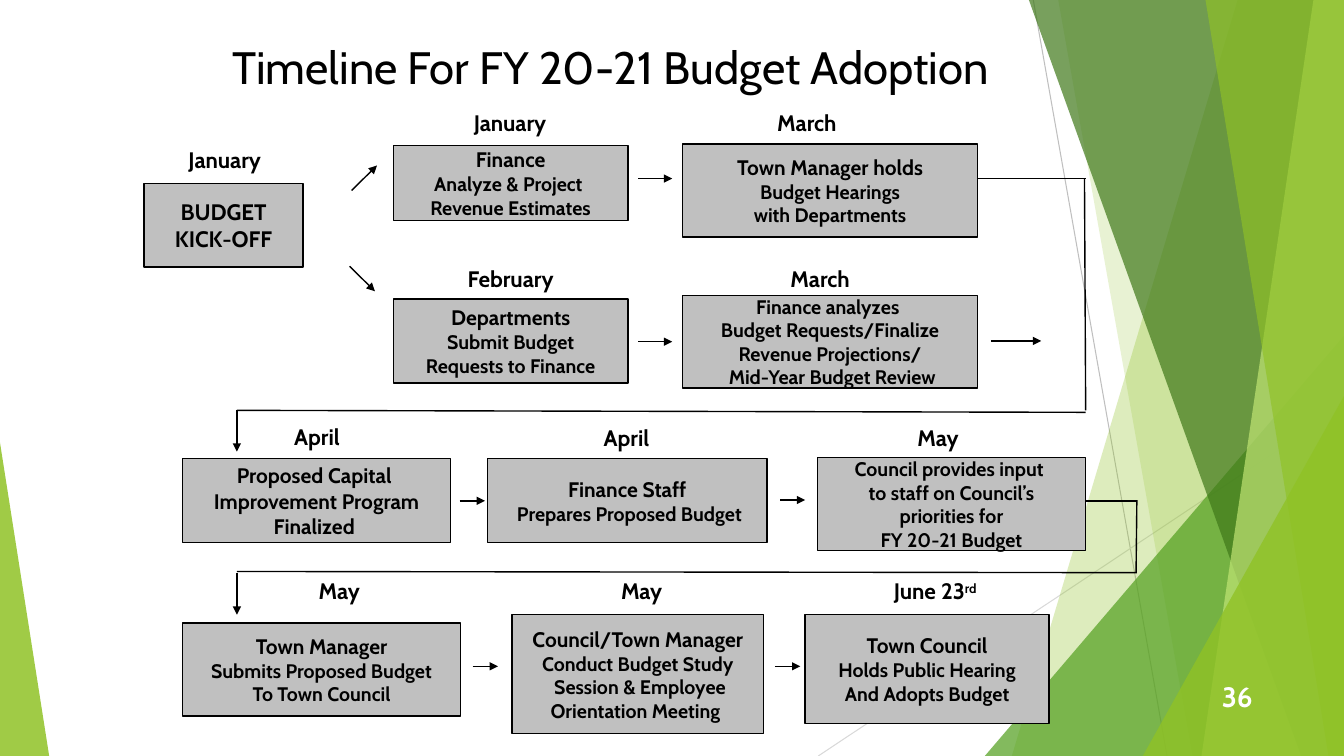
from dataclasses import dataclass

from lxml.etree import SubElement
from pptx import Presentation
from pptx.dml.color import RGBColor
from pptx.enum.shapes import MSO_CONNECTOR as Connector, MSO_SHAPE as Shape
from pptx.enum.text import MSO_ANCHOR as Anchor, PP_ALIGN as Align
from pptx.oxml.ns import qn
from pptx.util import Cm, Pt


@dataclass(frozen=True)
class Theme:
    font: str = "Cabin"
    ink: str = "000000"
    white: str = "FFFFFF"
    box: str = "C0C0C0"
    ray: str = "BFBFBF"
    pale_ray: str = "D9D9D9"
    green: str = "90C226"
    leaf: str = "54A021"
    forest: str = "3F7819"
    lime: str = "C0E474"
    title: float = 32.4
    page: float = 20
    month: float = 16
    lead: float = 15
    body: float = 14
    rule: float = 1
    ray_rule: float = 0.75


theme = Theme()
WIDTH, HEIGHT = 33.87, 19.05

deck = Presentation()
deck.slide_width, deck.slide_height = Cm(WIDTH), Cm(HEIGHT)
slide = deck.slides.add_slide(deck.slide_layouts[6])
shapes = slide.shapes


def write(frame, lines, align, anchor=Anchor.TOP, color=theme.ink, bold=True, wrap=True):
    frame.word_wrap = wrap
    frame.vertical_anchor = anchor
    for index, runs in enumerate(lines):
        paragraph = frame.paragraphs[0] if index == 0 else frame.add_paragraph()
        paragraph.alignment = align
        for words, size, raised in runs:
            run = paragraph.add_run()
            run.text = words
            run.font.name = theme.font
            run.font.size = Pt(size)
            run.font.bold = bold
            run.font.color.rgb = RGBColor.from_string(color)
            if raised:
                run.font._element.set("baseline", "30000")


def draw_line(ends, color=theme.ink, width=theme.rule, arrow=False):
    line = shapes.add_connector(Connector.STRAIGHT, *map(Cm, ends))
    line.line.color.rgb = RGBColor.from_string(color)
    line.line.width = Pt(width)
    if arrow:
        SubElement(line.line._get_or_add_ln(), qn("a:tailEnd"), type="triangle")
    SubElement(line._element.spPr, qn("a:effectLst"))


draw_line((26.04, 0, 29.41, HEIGHT), theme.ray, theme.ray_rule)
draw_line((WIDTH, 10.24, 20.62, HEIGHT), theme.pale_ray, theme.ray_rule)

# Bands give top and bottom left edges; wedges give left, top, width and apex.
backdrop = [
    (theme.green, 30, (31.19, 25.5)),
    (theme.green, 20, (26.67, 30.05)),
    (theme.leaf, 72, (24.82, 8.46, 9.05, 1)),
    (theme.forest, 70, (25.93, 32.79)),
    (theme.lime, 70, (33.1, 30.28)),
    (theme.green, 65, (30.38, 33.48)),
    (theme.green, 80, (28.8, 9.98, 5.07, 1)),
    (theme.green, 85, (0, 11.15, 1.24, 0)),
]
for color, opacity, outline in backdrop:
    if len(outline) == 2:
        top_edge, bottom_edge = outline
        corners = [(WIDTH, 0), (WIDTH, HEIGHT), (bottom_edge, HEIGHT)]
        builder = shapes.build_freeform(Cm(top_edge), Cm(0))
        builder.add_line_segments([(Cm(x), Cm(y)) for x, y in corners])
        facet = builder.convert_to_shape()
    else:
        left, top, width, apex = outline
        facet = shapes.add_shape(
            Shape.ISOSCELES_TRIANGLE, Cm(left), Cm(top), Cm(width), Cm(HEIGHT - top))
        facet.adjustments[0] = apex
    facet.shadow.inherit = False
    facet.line.fill.background()
    facet.fill.solid()
    facet.fill.fore_color.rgb = RGBColor.from_string(color)
    tint = facet.fill._xPr.find(qn("a:solidFill"))[0]
    SubElement(tint, qn("a:alpha"), val=str(opacity * 1000))

title = shapes.add_textbox(Cm(5.61), Cm(0.79), Cm(20.32), Cm(1.75))
write(title.text_frame, [[("Timeline For FY 20-21 Budget Adoption", theme.title, False)]],
      Align.LEFT, Anchor.MIDDLE, bold=False)

steps = [
    ("January", (3.76, 3.56, 3.81), (3.63, 4.62, 4.01, 2.11), theme.month, theme.month,
     ["BUDGET", "KICK-OFF"]),
    ("January", (10.95, 2.62, 3.81), (9.91, 3.66, 5.92, 1.9), theme.lead, theme.body,
     ["Finance", "Analyze & Project ", "Revenue Estimates"]),
    ("February", (9.91, 6.55, 5.92), (9.91, 7.54, 5.92, 2.11), theme.lead, theme.body,
     ["Departments", "Submit Budget", "Requests to Finance"]),
    ("March", (18.8, 2.62, 3.07), (17.2, 3.63, 7.44, 2.34), theme.lead, theme.body,
     ["Town Manager holds", "Budget Hearings", "with Departments"]),
    ("March", (17.81, 6.55, 5.72), (17.2, 7.44, 7.44, 2.34), theme.body, theme.body,
     ["Finance analyzes ", " Budget Requests/Finalize ", "Revenue Projections/",
      " Mid-Year Budget Review"]),
    ("April", (6.4, 10.54, 3.18), (4.6, 11.56, 6.76, 2.11), theme.lead, theme.lead,
     ["Proposed Capital ", "Improvement Program", "Finalized "]),
    ("April", (14.2, 10.57, 3.18), (12.29, 11.56, 7.04, 2.11), theme.lead, theme.body,
     ["Finance Staff", " Prepares Proposed Budget"]),
    ("May", (22.05, 10.57, 3.18), (20.6, 11.53, 6.76, 2.34), theme.body, theme.body,
     ["Council provides input ", "to staff on Council’s", " priorities for ",
      "FY 20-21 Budget"]),
    ("May", (6.96, 14.43, 3.18), (4.6, 15.7, 7.01, 2.34), theme.lead, theme.body,
     ["Town Manager", "Submits Proposed Budget", "To Town Council"]),
    ("May", (14.58, 14.43, 3.18), (12.9, 15.49, 6.35, 3), theme.lead, theme.body,
     ["Council/Town Manager", "Conduct Budget Study", " Session & Employee",
      "Orientation Meeting "]),
    ("June 23|rd", (20.93, 14.43, 5.28), (20.29, 15.49, 6.15, 2.74), theme.lead, theme.body,
     ["Town Council", "Holds Public Hearing", "And Adopts Budget"]),
]
for date, date_place, task_place, lead_size, body_size, task_lines in steps:
    task = shapes.add_shape(Shape.RECTANGLE, *map(Cm, task_place))
    task.shadow.inherit = False
    task.fill.solid()
    task.fill.fore_color.rgb = RGBColor.from_string(theme.box)
    task.line.color.rgb = RGBColor.from_string(theme.ink)
    task.line.width = Pt(theme.rule)
    write(task.text_frame,
          [[(words, body_size if row else lead_size, False)]
           for row, words in enumerate(task_lines)],
          Align.CENTER, Anchor.MIDDLE, wrap=False)
    month = shapes.add_textbox(*map(Cm, date_place), Cm(0.94))
    write(month.text_frame,
          [[(words, theme.month, part > 0) for part, words in enumerate(date.split("|"))]],
          Align.CENTER)

arrows = [
    (8.86, 4.8, 9.5, 4.17),
    (8.81, 6.71, 9.45, 7.34),
    (16.08, 4.5, 16.94, 4.5),
    (16.08, 8.61, 16.94, 8.61),
    (24.97, 8.59, 26.24, 8.59),
    (5.97, 10.34, 5.97, 11.38),
    (11.58, 12.62, 12.22, 12.62),
    (19.66, 12.6, 20.29, 12.6),
    (5.97, 14.43, 5.97, 15.49),
    (11.91, 16.79, 12.55, 16.79),
    (19.53, 16.79, 20.17, 16.79),
]
for ends in arrows:
    draw_line(ends, arrow=True)

row_returns = [
    (24.64, 4.5, 27.36, 4.5),
    (27.33, 4.5, 27.36, 10.34),
    (27.36, 10.39, 5.97, 10.34),
    (27.36, 12.62, 28.63, 12.62),
    (28.65, 12.6, 28.63, 14.43),
    (28.65, 14.43, 5.97, 14.4),
]
for ends in row_returns:
    draw_line(ends)

page = shapes.add_textbox(Cm(29.92), Cm(17.04), Cm(1.9), Cm(1.02))
write(page.text_frame, [[("36", theme.page, False)]], Align.RIGHT, Anchor.MIDDLE, theme.white)

deck.save("out.pptx")
